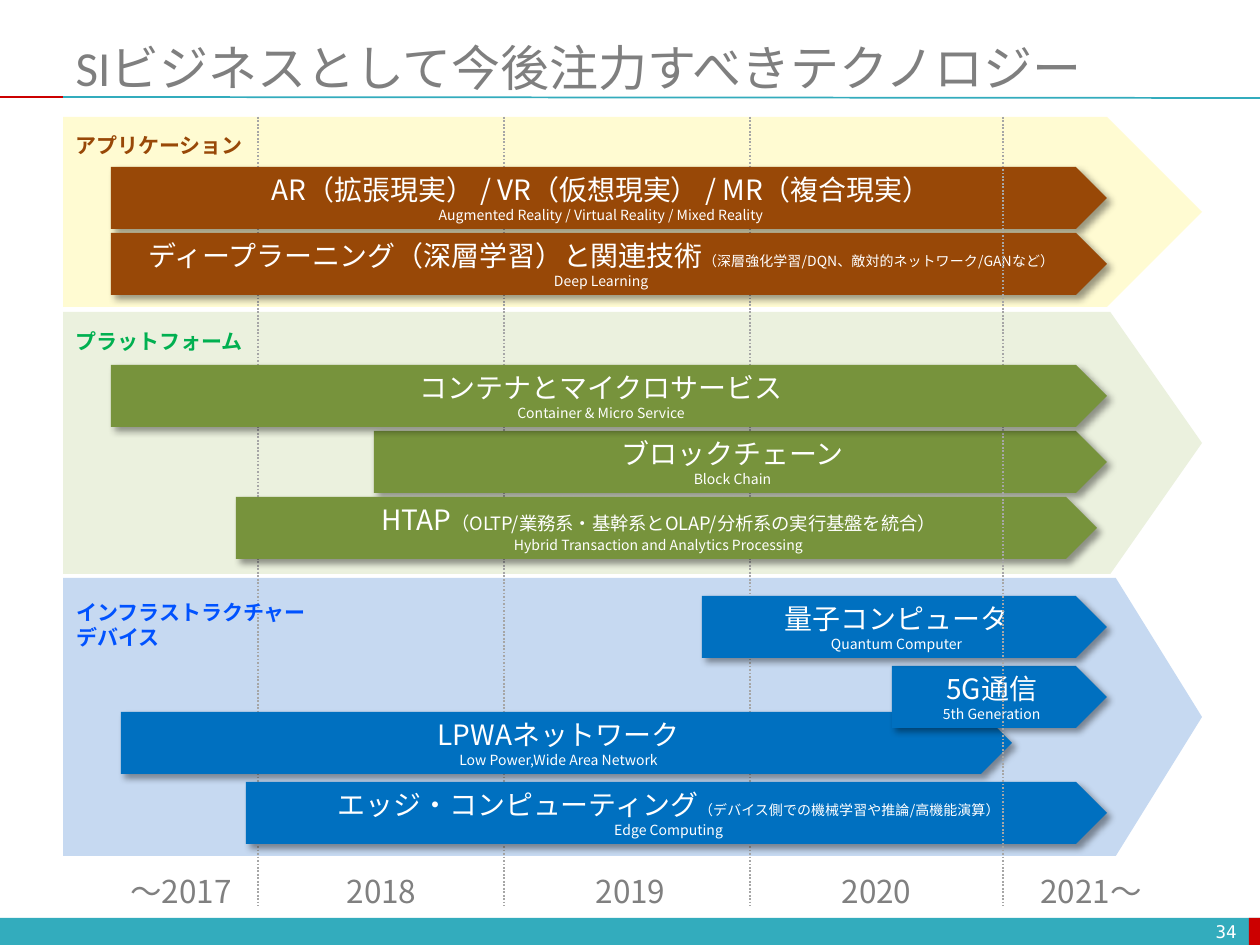
import dataclasses

import lxml.etree
import pptx
import pptx.dml.color
import pptx.enum.dml
import pptx.enum.shapes
import pptx.enum.text
import pptx.oxml.ns
import pptx.util

EMU_PER_PX = 914400 / 126
SANS = "Noto Sans CJK JP"
COLORS = {
    "teal": "33ACBD", "red": "CC0000", "title": "7F7F7F", "year": "808080",
    "dots": "A6A6A6", "white": "FFFFFF",
    "app band": "FFFBD2", "app": "984807", "app label": "984807",
    "platform band": "EBF1DE", "platform": "77933C", "platform label": "00B050",
    "infra band": "C6D9F1", "infra": "0070C0", "infra label": "0052FF",
}
ALIGN = pptx.enum.text.PP_ALIGN
ANCHOR = pptx.enum.text.MSO_ANCHOR
SHAPE = pptx.enum.shapes.MSO_SHAPE
BAR_HEIGHT = 62


@dataclasses.dataclass
class Band:
    layer: str
    top: int
    height: int
    point: float
    label: list[str]
    label_left: int
    label_top: int
    label_width: int
    label_height: int


@dataclasses.dataclass
class Bar:
    layer: str
    left: int
    top: int
    width: int
    name: str
    english: str
    remark: str = ""
    remark_size: float = 8
    in_front: bool = False  # drawn over the last year line


@dataclasses.dataclass
class Year:
    text: str
    left: int
    width: int


BANDS = [
    Band("app", 117, 190, 0.5, ["アプリケーション"], 63, 126, 195, 38),
    Band("platform", 312, 262, 0.35, ["プラットフォーム"], 63, 322, 195, 38),
    Band("infra", 578, 278, 0.31, ["インフラストラクチャー", "デバイス"], 64, 593, 258, 63),
]
BARS = [
    Bar("app", 111, 167, 996, "AR（拡張現実） / VR（仮想現実） / MR（複合現実）",
        "Augmented Reality / Virtual Reality / Mixed Reality"),
    Bar("app", 111, 233, 996, "ディープラーニング（深層学習）と関連技術", "Deep Learning",
        "（深層強化学習/DQN、敵対的ネットワーク/GANなど）"),
    Bar("platform", 111, 365, 996, "コンテナとマイクロサービス",
        "Container & Micro Service", in_front=True),
    Bar("platform", 374, 431, 733, "ブロックチェーン", "Block Chain"),
    Bar("platform", 236, 497, 861, "HTAP", "Hybrid Transaction and Analytics Processing",
        "（OLTP/業務系・基幹系とOLAP/分析系の実行基盤を統合）", 10.5),
    Bar("infra", 121, 712, 891, "LPWAネットワーク", "Low Power,Wide Area Network"),
    Bar("infra", 892, 666, 215, "5G通信", "5th Generation"),
    Bar("infra", 246, 782, 861, "エッジ・コンピューティング", "Edge Computing",
        "（デバイス側での機械学習や推論/高機能演算）"),
    Bar("infra", 702, 596, 405, "量子コンピュータ", "Quantum Computer"),
]
YEARS = [Year("〜2017", 113, 136), Year("2018", 329, 105), Year("2019", 578, 105),
         Year("2020", 824, 105), Year("2021〜", 1023, 136)]
YEAR_LINES = [258, 504, 750, 1003]


def px(length: int) -> pptx.util.Emu:
    return pptx.util.Emu(round(length * EMU_PER_PX))


def rgb(color: str) -> pptx.dml.color.RGBColor:
    return pptx.dml.color.RGBColor.from_string(COLORS[color])


def style(paragraph, size: float, color: str, font: str = SANS, bold: bool = False,
          align=ALIGN.LEFT) -> None:
    paragraph.alignment = align
    paragraph.font.size = pptx.util.Pt(size)
    paragraph.font.bold = bold
    paragraph.font.color.rgb = rgb(color)
    paragraph.font.name = font
    defaults = paragraph._p.pPr.find(pptx.oxml.ns.qn("a:defRPr"))
    lxml.etree.SubElement(defaults, pptx.oxml.ns.qn("a:ea"), typeface=SANS)


def add_block(slide, kind, left: int, top: int, width: int, height: int, color: str):
    block = slide.shapes.add_shape(kind, px(left), px(top), px(width), px(height))
    block.shadow.inherit = False
    block.fill.solid()
    block.fill.fore_color.rgb = rgb(color)
    block.line.fill.background()
    return block


def add_line(slide, x1: int, y1: int, x2: int, y2: int, color: str, dotted: bool = False) -> None:
    line = slide.shapes.add_connector(
        pptx.enum.shapes.MSO_CONNECTOR.STRAIGHT, px(x1), px(y1), px(x2), px(y2))
    line.line.color.rgb = rgb(color)
    line.line.width = pptx.util.Pt(1)
    if dotted:
        line.line.dash_style = pptx.enum.dml.MSO_LINE.ROUND_DOT
    lxml.etree.SubElement(line._element.spPr, pptx.oxml.ns.qn("a:effectLst"))


def add_label(slide, lines: list[str], left: int, top: int, width: int, height: int,
              size: float, color: str, bold: bool = False, align=ALIGN.LEFT) -> None:
    frame = slide.shapes.add_textbox(px(left), px(top), px(width), px(height)).text_frame
    frame.word_wrap = False
    frame.auto_size = pptx.enum.text.MSO_AUTO_SIZE.SHAPE_TO_FIT_TEXT
    frame.text = "\n".join(lines)
    for paragraph in frame.paragraphs:
        style(paragraph, size, color, bold=bold, align=align)


def add_band(slide, band: Band) -> None:
    arrow = add_block(slide, SHAPE.PENTAGON, 63, band.top, 1139, band.height, f"{band.layer} band")
    arrow.adjustments[0] = band.point


def add_drop_shadow(shape) -> None:
    qn = pptx.oxml.ns.qn
    effects = shape._element.spPr.find(qn("a:effectLst"))
    shadow = lxml.etree.SubElement(
        effects, qn("a:outerShdw"), blurRad=str(pptx.util.Pt(4)), dist=str(pptx.util.Pt(3)),
        dir="2700000", algn="tl", rotWithShape="0")
    black = lxml.etree.SubElement(shadow, qn("a:srgbClr"), val="000000")
    lxml.etree.SubElement(black, qn("a:alpha"), val="40000")


def add_bar(slide, bar: Bar) -> None:
    arrow = add_block(slide, SHAPE.PENTAGON, bar.left, bar.top, bar.width, BAR_HEIGHT, bar.layer)
    add_drop_shadow(arrow)
    frame = arrow.text_frame
    frame.vertical_anchor = ANCHOR.MIDDLE
    heading = frame.paragraphs[0]
    heading.add_run().text = bar.name
    style(heading, 16, "white", align=ALIGN.CENTER)
    if bar.remark:
        remark = heading.add_run()
        remark.text = bar.remark
        remark.font.size = pptx.util.Pt(bar.remark_size)
    english = frame.add_paragraph()
    english.text = bar.english
    style(english, 8, "white", align=ALIGN.CENTER)


def main() -> None:
    deck = pptx.Presentation()
    deck.slide_width, deck.slide_height = px(1260), px(945)
    slide = deck.slides.add_slide(deck.slide_layouts.get_by_name("Title Only"))

    # Title, rules and footer
    title = slide.shapes.title
    title.left, title.top, title.width, title.height = px(63), px(38), px(1197), px(58)
    title.text_frame.text = "SIビジネスとして今後注力すべきテクノロジー"
    title.text_frame.auto_size = pptx.enum.text.MSO_AUTO_SIZE.NONE
    title.text_frame.vertical_anchor = ANCHOR.MIDDLE
    style(title.text_frame.paragraphs[0], 28, "title", "Calibri")
    add_line(slide, 63, 97, 1260, 98, "teal")
    add_line(slide, 0, 97, 63, 97, "red")
    add_block(slide, SHAPE.RECTANGLE, 0, 918, 1260, 27, "teal")
    add_block(slide, SHAPE.RECTANGLE, 1249, 918, 11, 27, "red")
    page = slide.shapes.add_textbox(px(955), px(916), px(294), px(30)).text_frame
    page.word_wrap = True
    page.vertical_anchor = ANCHOR.MIDDLE
    page.text = "34"
    style(page.paragraphs[0], 10, "white", "DejaVu Sans Mono", align=ALIGN.RIGHT)

    # Technology layers
    for band in BANDS:
        add_band(slide, band)
    for x in YEAR_LINES[:-1]:
        add_line(slide, x, 117, x, 906, "dots", dotted=True)
    for band in BANDS:
        add_label(slide, band.label, band.label_left, band.label_top, band.label_width,
                  band.label_height, 12, f"{band.layer} label", bold=True)

    # Technologies, with the last year line between the two groups
    for bar in BARS:
        if not bar.in_front:
            add_bar(slide, bar)
    add_line(slide, YEAR_LINES[-1], 117, YEAR_LINES[-1], 906, "dots", dotted=True)
    for bar in BARS:
        if bar.in_front:
            add_bar(slide, bar)

    # Time axis
    for year in YEARS:
        add_label(slide, [year.text], year.left, 866, year.width, 50, 18, "year",
                  align=ALIGN.CENTER)

    deck.save("out.pptx")


if __name__ == "__main__":
    main()
